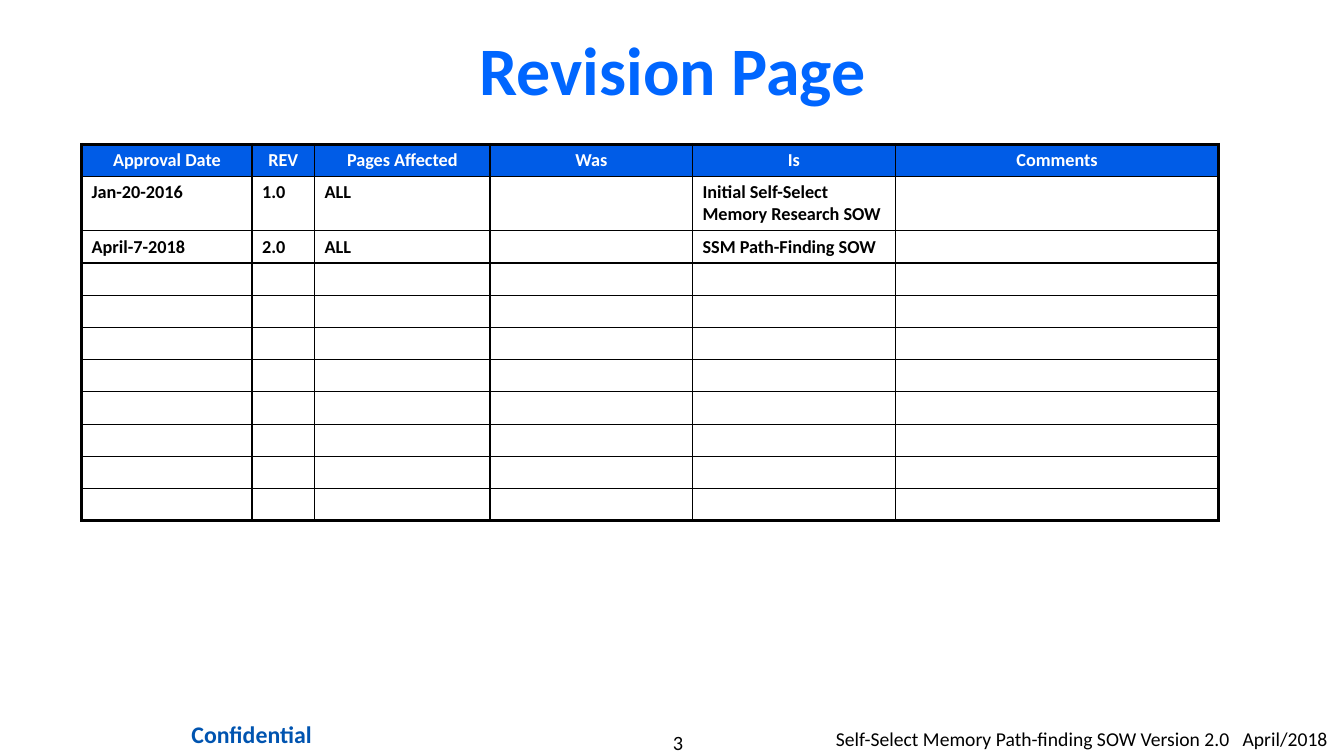
from dataclasses import dataclass

from lxml import etree
from pptx import Presentation
from pptx.dml.color import RGBColor
from pptx.enum.text import MSO_ANCHOR, PP_ALIGN
from pptx.oxml.ns import qn
from pptx.util import Emu, Pt

LEFT, CENTER = PP_ALIGN.LEFT, PP_ALIGN.CENTER
TOP, MIDDLE = MSO_ANCHOR.TOP, MSO_ANCHOR.MIDDLE
EMU_PER_PX = 9144  # 100 px to the inch


@dataclass(frozen=True)
class Theme:
    font: str = "Calibri"
    title_color: str = "0066FF"
    header_fill: str = "005CE7"
    confidential_color: str = "0054B0"
    black: str = "000000"
    white: str = "FFFFFF"
    title_size: float = 48.5
    cell_size: float = 13
    confidential_size: float = 17
    version_size: float = 14
    number_size: float = 14.5
    outer_line: float = 2.25
    inner_line: float = 1


THEME = Theme()

COLUMN_WIDTHS = [169, 62, 174, 201, 201, 321]
ROW_HEIGHT, TWO_LINE_HEIGHT = 32, 54
ROW_COUNT = 11
HEADERS = ["Approval Date", "REV", "Pages Affected", "Was", "Is", "Comments"]
REVISIONS = [
    ["Jan-20-2016", "1.0", "ALL", "", "Initial Self-Select Memory Research SOW", ""],
    ["April-7-2018", "2.0", "ALL", "", "SSM Path-Finding SOW", ""],
]


def px(length):
    return Emu(length * EMU_PER_PX)


def apply_format(target, values):
    for name, value in values.items():
        setattr(target, name, value)


def margins(horizontal, vertical):
    return {
        "margin_left": px(horizontal), "margin_right": px(horizontal),
        "margin_top": px(vertical), "margin_bottom": px(vertical),
    }


def write_text(paragraph, text, size, color, bold=False, align=LEFT):
    paragraph.alignment = align
    run = paragraph.add_run()
    run.text = text
    apply_format(run.font, {"name": THEME.font, "size": Pt(size), "bold": bold})
    run.font.color.rgb = RGBColor.from_string(color)


def add_label(slide, box, text, size, color, bold=False, align=CENTER,
              inset=(0, 0), anchor=TOP):
    frame = slide.shapes.add_textbox(*map(px, box)).text_frame
    apply_format(frame, {"word_wrap": True, "vertical_anchor": anchor, **margins(*inset)})
    write_text(frame.paragraphs[0], text, size, color, bold, align)


def set_borders(cell, widths):
    properties = cell._tc.get_or_add_tcPr()
    for position, (side, width) in enumerate(widths.items()):
        line = etree.Element(qn(f"a:ln{side}"), w=str(Pt(width)))
        fill = etree.SubElement(line, qn("a:solidFill"))
        etree.SubElement(fill, qn("a:srgbClr"), val=THEME.black)
        properties.insert(position, line)


def fill_cell(cell, text, is_header):
    apply_format(cell, {"vertical_anchor": TOP, **margins(10, 5)})
    if is_header:
        cell.fill.solid()
        cell.fill.fore_color.rgb = RGBColor.from_string(THEME.header_fill)
    else:
        cell.fill.background()
    paragraph = cell.text_frame.paragraphs[0]
    if text:
        color = THEME.white if is_header else THEME.black
        write_text(paragraph, text, THEME.cell_size, color, True,
                   CENTER if is_header else LEFT)
    else:
        # Keeps blank rows at the height of one text line
        etree.SubElement(paragraph._p, qn("a:endParaRPr"),
                         sz=str(round(THEME.cell_size * 100)))


def add_revision_table(slide, left, top):
    last_row, last_column = ROW_COUNT - 1, len(HEADERS) - 1
    heights = [ROW_HEIGHT] * ROW_COUNT
    heights[1] = TWO_LINE_HEIGHT
    box = (left, top, sum(COLUMN_WIDTHS), sum(heights))
    table = slide.shapes.add_table(ROW_COUNT, len(HEADERS), *map(px, box)).table
    apply_format(table, {"first_row": False, "horz_banding": False})
    for column, width in zip(table.columns, COLUMN_WIDTHS):
        column.width = px(width)

    blank_rows = ROW_COUNT - 1 - len(REVISIONS)
    contents = [HEADERS, *REVISIONS, *[[""] * len(HEADERS)] * blank_rows]
    for r, texts in enumerate(contents):
        table.rows[r].height = px(heights[r])
        for c, text in enumerate(texts):
            cell = table.cell(r, c)
            fill_cell(cell, text, is_header=r == 0)
            on_edge = {"L": c == 0, "R": c == last_column, "T": r == 0, "B": r == last_row}
            set_borders(cell, {
                side: THEME.outer_line if outer else THEME.inner_line
                for side, outer in on_edge.items()
            })


def add_footer(slide):
    add_label(slide, (556, 724, 233, 24), "3", THEME.number_size, THEME.black)
    add_label(slide, (155, 708, 189, 41), "Confidential", THEME.confidential_size,
              THEME.confidential_color, bold=True, inset=(12, 6))
    add_label(slide, (829, 716, 505, 34),
              "Self-Select Memory Path-finding SOW Version 2.0   April/2018",
              THEME.version_size, THEME.black, align=LEFT, inset=(0, 5))


def main():
    presentation = Presentation()
    apply_format(presentation, {"slide_width": px(1333), "slide_height": px(750)})
    slide = presentation.slides.add_slide(presentation.slide_layouts[6])

    # Footer
    add_footer(slide)

    # Title
    add_label(slide, (217, 30, 900, 75), "Revision Page", THEME.title_size,
              THEME.title_color, bold=True, inset=(10, 5), anchor=MIDDLE)

    # Revision history
    add_revision_table(slide, 81, 143)

    presentation.save("out.pptx")


if __name__ == "__main__":
    main()
